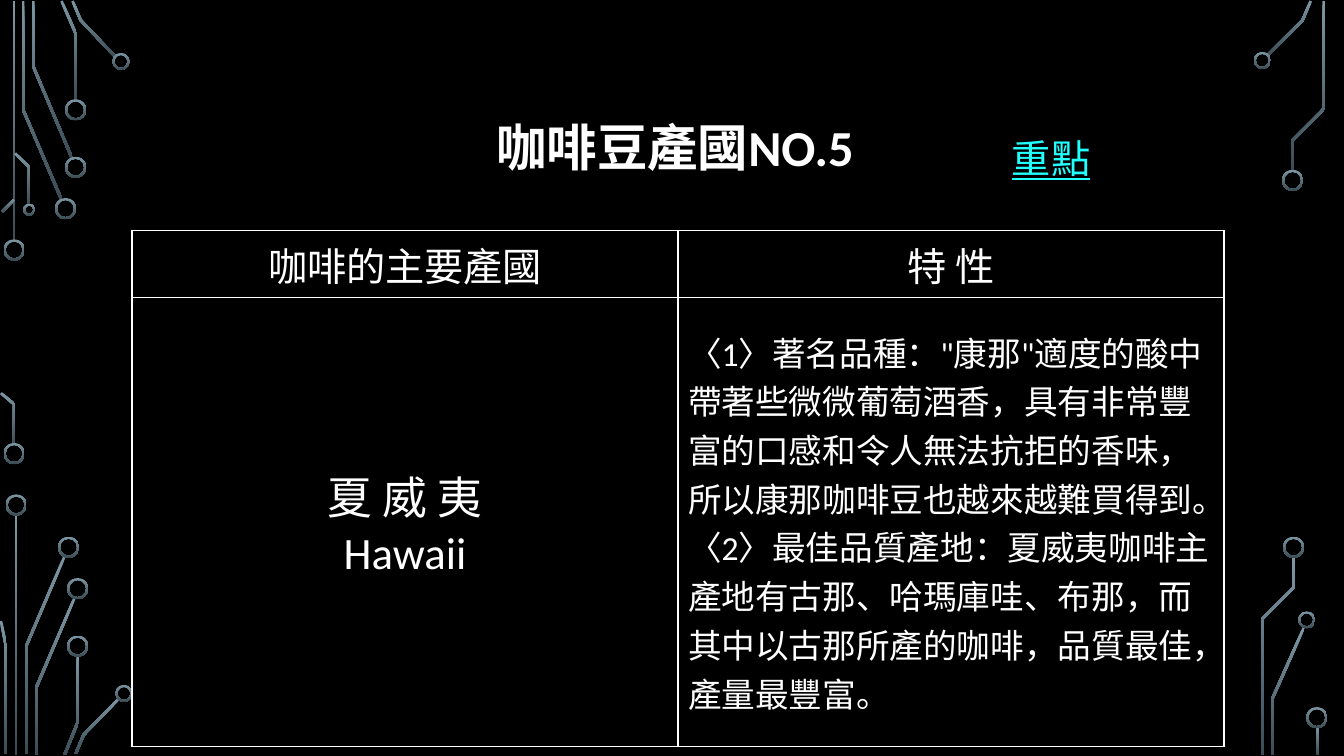
from math import hypot

from lxml.etree import SubElement
from pptx import Presentation
from pptx.dml.color import RGBColor
from pptx.enum.shapes import MSO_SHAPE
from pptx.enum.text import MSO_ANCHOR, MSO_AUTO_SIZE, PP_ALIGN
from pptx.oxml.ns import qn
from pptx.util import Inches, Pt

FONT = "Calibri"
WHITE = "FFFFFF"
TRACE_WIDTH = 0.026
RING_WALL = 0.02

CIRCUITS = [
    {"origin": (0, 0),
     "traces": [
         [(0.14, 0.01), (0.14, 2.4)],
         [(0.23, 0.01), (0.23, 1.09), (0.61, 1.98)],
         [(0.33, 0.01), (0.33, 0.66), (0.71, 1.56)],
         [(0.61, 0.01), (0.75, 0.33), (0.75, 1)],
         [(0.72, 0.01), (0.8, 0.2), (1.15, 0.57)],
         [(0.02, 2.1), (0.14, 1.98)],
         [(0.15, 1.52), (0.29, 1.66), (0.29, 2.03)]],
     "rings": [(0.14, 2.48, 0.21), (0.65, 2.07, 0.21), (0.75, 1.66, 0.21),
               (0.75, 1.09, 0.21), (1.2, 0.61, 0.17), (0.29, 2.08, 0.12)]},
    {"origin": (0, 3.8),
     "traces": [
         [(0.01, 0.1), (0.14, 0.21), (0.14, 0.61)],
         [(0.16, 1.3), (0.16, 3.69)],
         [(0.26, 3.68), (0.26, 2.61), (0.64, 1.72)],
         [(0.06, 3.68), (0.06, 2.61), (0.01, 2.36)],
         [(0.36, 3.69), (0.36, 3.02), (0.74, 2.13)],
         [(0.64, 3.69), (0.77, 3.37), (0.77, 2.7)],
         [(0.75, 3.68), (0.83, 3.49), (1.18, 3.13)]],
     "rings": [(0.14, 0.7, 0.21), (0.16, 1.21, 0.21), (0.68, 1.63, 0.21),
               (0.77, 2.04, 0.21), (0.77, 2.61, 0.21), (1.23, 3.08, 0.17)]},
    {"origin": (12.4, 0),
     "traces": [
         [(0.17, 0.55), (0.52, 0.2), (0.6, 0.01)],
         [(0.42, 1.69), (0.42, 1.39), (0.73, 1.08), (0.73, 0.01)]],
     "rings": [(0.12, 0.6, 0.17), (0.42, 1.79, 0.21)]},
    {"origin": (12.4, 5.2),
     "traces": [
         [(0.12, 2.29), (0.12, 0.94), (0.43, 0.63), (0.43, 0.32)],
         [(0.22, 2.29), (0.22, 1.73), (0.53, 1.03)],
         [(0.67, 2.01), (0.67, 2.29)]],
     "rings": [(0.43, 0.23, 0.21), (0.56, 0.95, 0.17), (0.66, 1.92, 0.21)]},
]

COFFEE_ROWS = [
    (0.66, [(["咖啡的主要產國"], 28, PP_ALIGN.CENTER),
            (["特 性"], 28, PP_ALIGN.CENTER)]),
    (4.45, [(["夏 威 夷", "Hawaii"], 32, PP_ALIGN.CENTER),
            (["〈1〉著名品種：\"康那\"適度的酸中帶著些微微葡萄酒香，具有非常豐富的口感和"
              "令人無法抗拒的香味，所以康那咖啡豆也越來越難買得到。",
              "〈2〉最佳品質產地：夏威夷咖啡主產地有古那、哈瑪庫哇、布那，而其中以古那"
              "所產的咖啡，品質最佳，產量最豐富。"], 24, PP_ALIGN.LEFT)]),
]


def color(hex_code):
    """Turn a hex string into a colour."""
    return RGBColor.from_string(hex_code)


def write(frame, lines, size, align, ink=WHITE):
    """Fill a text frame with evenly formatted paragraphs."""
    frame.text = "\n".join(lines)
    for paragraph in frame.paragraphs:
        paragraph.alignment = align
        paragraph.font.name = FONT
        paragraph.font.size = Pt(size)
        paragraph.font.color.rgb = color(ink)


def paint_metal(part):
    """Give a circuit part its vertical steel gradient."""
    part.shadow.inherit = False
    part.line.fill.background()
    part.fill.gradient()
    part.fill.gradient_angle = 270
    for stop, tone in zip(part.fill.gradient_stops, ("7C96A3", "3B4C54")):
        stop.color.rgb = color(tone)


def trace_outline(route):
    """Return the outline of a band that follows a route, with mitred bends."""
    normals = []
    for (x1, y1), (x2, y2) in zip(route, route[1:]):
        length = hypot(x2 - x1, y2 - y1)
        normals.append(((y1 - y2) / length, (x2 - x1) / length))
    near, far = [], []
    joints = zip(route, normals[:1] + normals, normals + normals[-1:])
    for (x, y), (ax, ay), (bx, by) in joints:
        reach = TRACE_WIDTH / 2 / (1 + ax * bx + ay * by)
        dx, dy = (ax + bx) * reach, (ay + by) * reach
        near.append((x + dx, y + dy))
        far.append((x - dx, y - dy))
    return near + far[::-1]


def draw_circuit(slide, origin, traces, rings):
    """Draw one corner of circuit traces and rings from its origin."""
    left, top = origin
    for route in traces:
        outline = [(Inches(left + x), Inches(top + y))
                   for x, y in trace_outline(route)]
        builder = slide.shapes.build_freeform(*outline[0])
        builder.add_line_segments(outline[1:], close=True)
        paint_metal(builder.convert_to_shape())
    for x, y, size in rings:
        ring = slide.shapes.add_shape(
            MSO_SHAPE.DONUT, Inches(left + x - size / 2),
            Inches(top + y - size / 2), Inches(size), Inches(size))
        ring.adjustments[0] = RING_WALL / size
        paint_metal(ring)


def place_title(slide, left, top, width, height):
    """Place the slide title in its box."""
    title = slide.shapes.title
    title.left, title.top = Inches(left), Inches(top)
    title.width, title.height = Inches(width), Inches(height)
    frame = title.text_frame
    write(frame, ["咖啡豆產國NO.5"], 36, PP_ALIGN.CENTER)
    frame.vertical_anchor = MSO_ANCHOR.MIDDLE
    frame.paragraphs[0].font.bold = True
    frame.paragraphs[0].line_spacing = 0.9


def place_key_point(slide, left, top, width, height):
    """Place the underlined key point label."""
    label = slide.shapes.add_textbox(
        Inches(left), Inches(top), Inches(width), Inches(height))
    frame = label.text_frame
    frame.word_wrap = False
    frame.auto_size = MSO_AUTO_SIZE.SHAPE_TO_FIT_TEXT
    write(frame, ["重點"], 28, PP_ALIGN.CENTER, "22FFFF")
    frame.paragraphs[0].font.underline = True


def border(cell):
    """Draw thin white lines on all four sides of a cell."""
    properties = cell._tc.get_or_add_tcPr()
    for position, side in enumerate(("a:lnL", "a:lnR", "a:lnT", "a:lnB")):
        edge = SubElement(properties, qn(side), w=str(Pt(1)))
        SubElement(SubElement(edge, qn("a:solidFill")),
                   qn("a:srgbClr"), val=WHITE)
        properties.insert(position, edge)


def place_coffee_table(slide, left, top, width):
    """Place the table of producing country and traits."""
    height = sum(row_height for row_height, _ in COFFEE_ROWS)
    table = slide.shapes.add_table(
        2, 2, Inches(left), Inches(top), Inches(width), Inches(height)).table
    table.first_row = table.horz_banding = False
    for row, (row_height, entries) in enumerate(COFFEE_ROWS):
        table.rows[row].height = Inches(row_height)
        for column, (lines, size, align) in enumerate(entries):
            cell = table.cell(row, column)
            cell.fill.background()
            cell.vertical_anchor = MSO_ANCHOR.MIDDLE
            write(cell.text_frame, lines, size, align)
            border(cell)


def main():
    """Build and save the coffee slide."""
    deck = Presentation()
    deck.slide_width, deck.slide_height = Inches(13.33), Inches(7.5)
    slide = deck.slides.add_slide(deck.slide_layouts[5])
    slide.background.fill.solid()
    slide.background.fill.fore_color.rgb = color("000000")
    for circuit in CIRCUITS:
        draw_circuit(slide, **circuit)
    place_title(slide, 1.31, 0.68, 10.77, 1.62)
    place_coffee_table(slide, 1.31, 2.29, 10.83)
    place_key_point(slide, 9.93, 1.28, 0.99, 0.57)
    deck.save("out.pptx")


if __name__ == "__main__":
    main()
